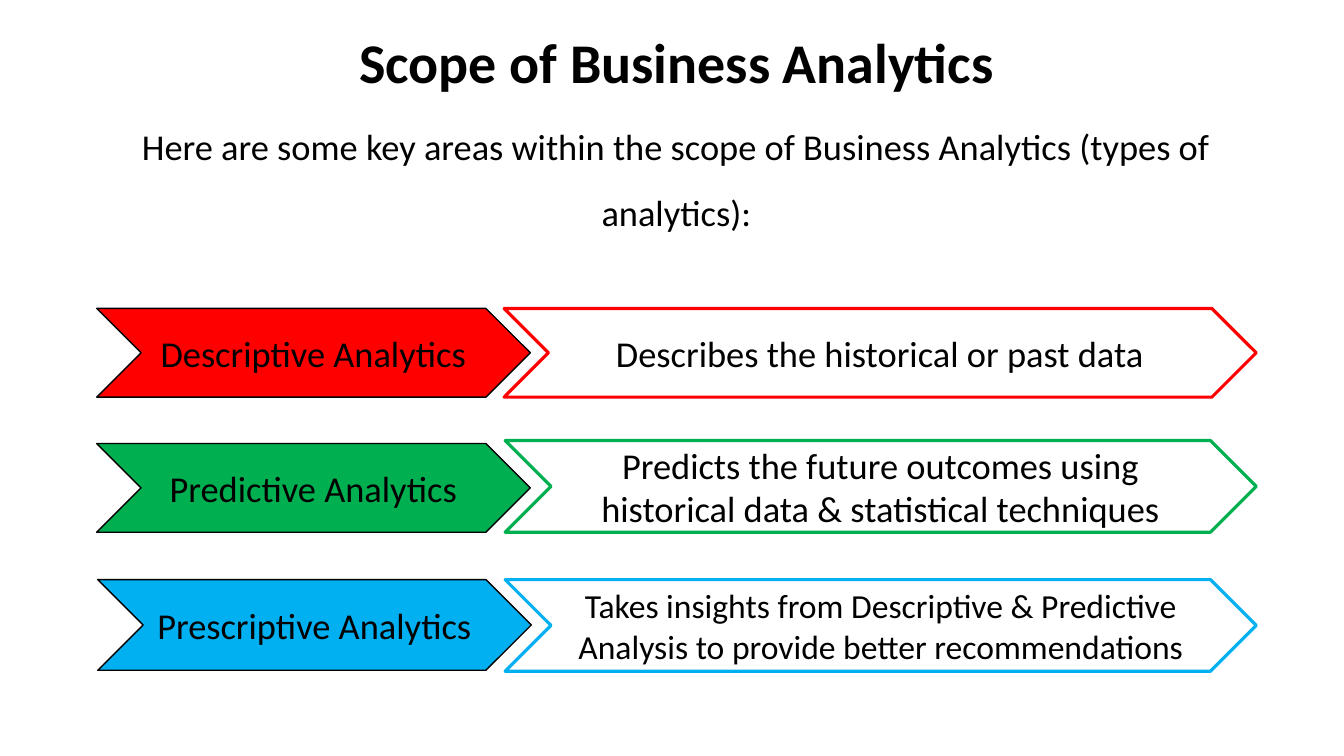
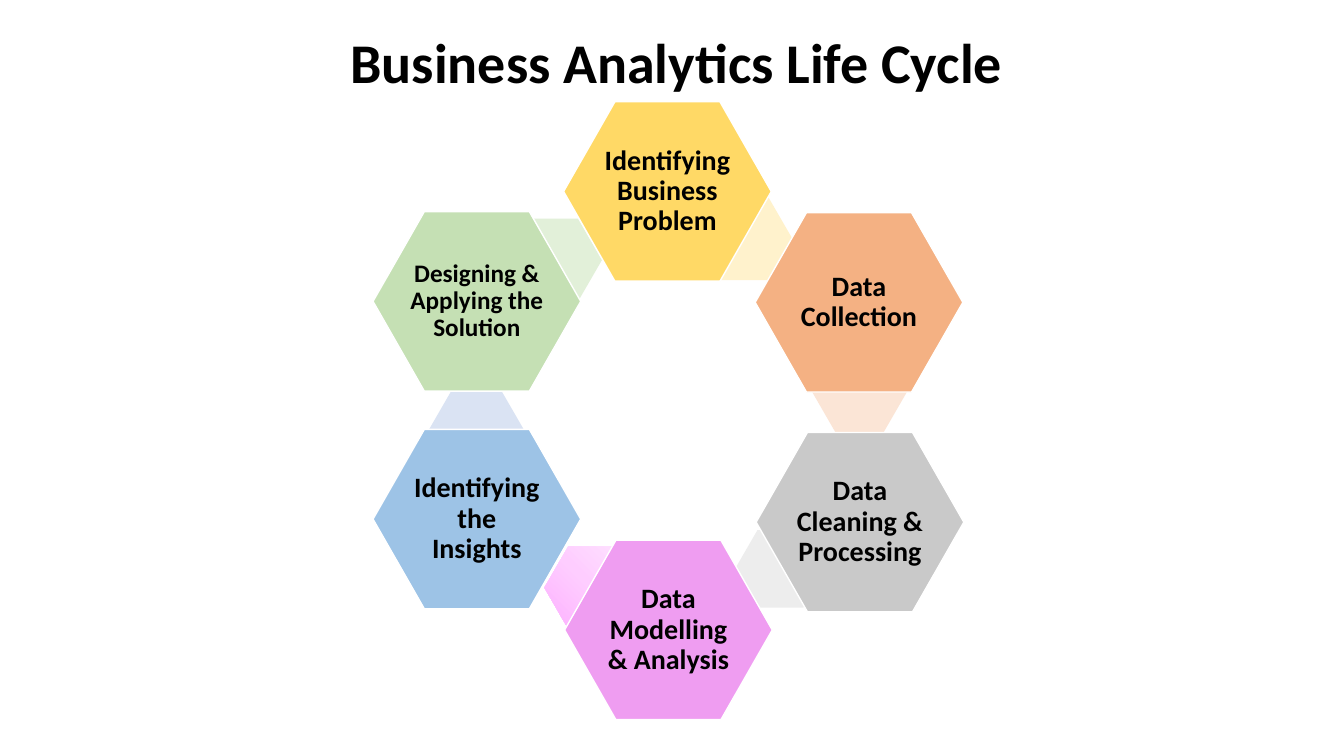
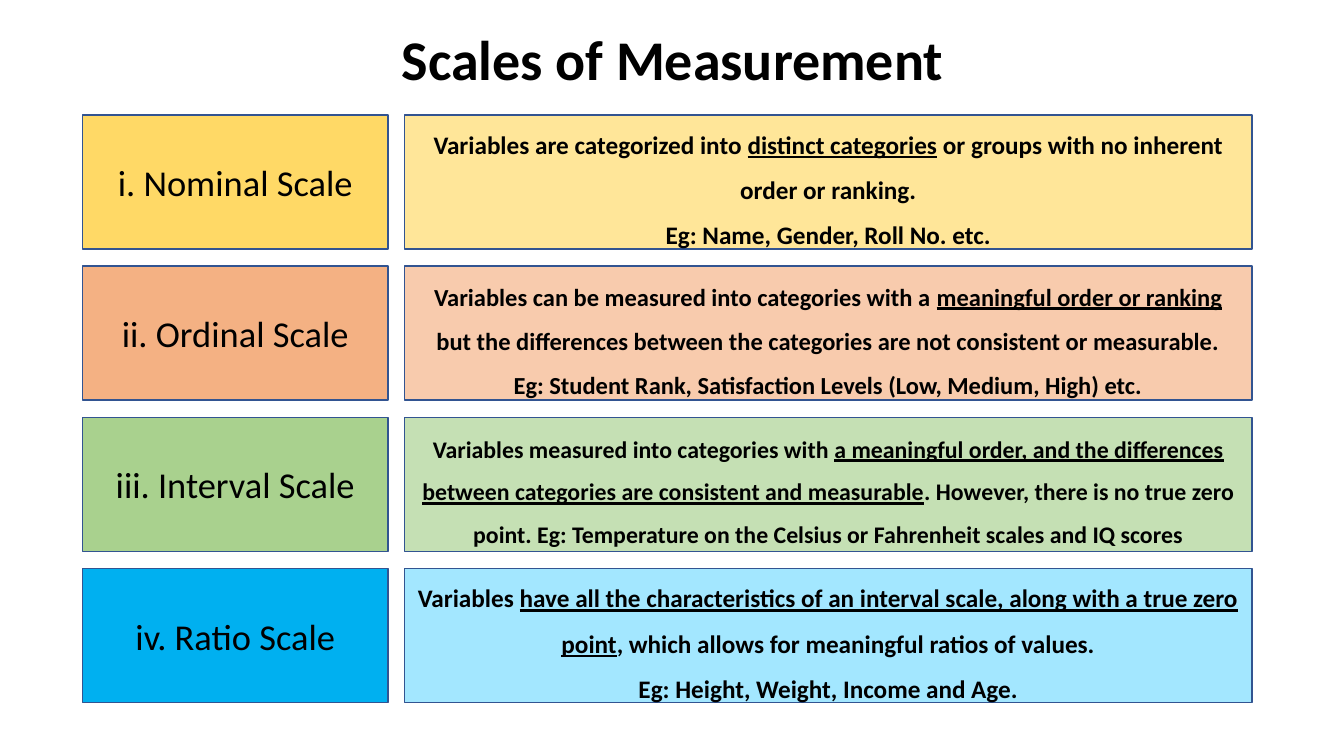
from pptx import Presentation
from pptx.dml.color import RGBColor
from pptx.enum.shapes import MSO_SHAPE
from pptx.enum.text import MSO_ANCHOR, PP_ALIGN
from pptx.oxml import parse_xml
from pptx.util import Inches, Pt

FONT = "Calibri"
BLACK, WHITE, NAVY = "000000", "FFFFFF", "325491"
RED, GREEN, BLUE = "FF0000", "00B050", "00B0F0"


def add_box(slide, kind, box, fill, line=None, weight=1):
    """Add a preset shape; no line colour means no outline."""
    sp = slide.shapes.add_shape(kind, *[Inches(v) for v in box])
    sp.shadow.inherit = False
    sp.fill.solid()
    sp.fill.fore_color.rgb = RGBColor.from_string(fill)
    if line:
        sp.line.color.rgb = RGBColor.from_string(line)
        sp.line.width = Pt(weight)
    else:
        sp.line.fill.background()
    return sp


def write(sp, paragraphs, size, bold=False, spacing=None, anchor=MSO_ANCHOR.MIDDLE):
    """Fill a shape with centred text; pieces between bars are underlined."""
    tf = sp.text_frame
    tf.word_wrap = True
    tf.vertical_anchor = anchor
    for i, text in enumerate(paragraphs):
        p = tf.add_paragraph() if i else tf.paragraphs[0]
        p.alignment = PP_ALIGN.CENTER
        p.line_spacing = spacing
        p.font.name, p.font.size, p.font.bold = FONT, Pt(size), bold
        p.font.color.rgb = RGBColor.from_string(BLACK)
        for j, piece in enumerate(text.split("|")):
            r = p.add_run()
            r.text = piece
            if j % 2:
                r.font.underline = True
    return tf


prs = Presentation()
prs.slide_width, prs.slide_height = Inches(13.33), Inches(7.5)

# Slides and titles
slides = []
for title, left, top in [
    ("Scope of Business Analytics", 0.96, 0.22),
    ("Business Analytics Life Cycle", 0.96, 0.22),
    ("Scales of Measurement", 0.92, 0.19),
]:
    slide = prs.slides.add_slide(prs.slide_layouts[6])
    tb = slide.shapes.add_textbox(Inches(left), Inches(top), Inches(11.5), Inches(0.77))
    write(tb, [title], 40, bold=True, anchor=MSO_ANCHOR.TOP)
    slides.append(slide)
scope, cycle, scales = slides

# Scope: introduction and one pair of chevrons per type
tb = scope.shapes.add_textbox(Inches(0.96), Inches(0.97), Inches(11.5), Inches(1.4))
write(tb, ["Here are some key areas within the scope of Business Analytics "
           "(types of analytics):"], 26, spacing=1.5, anchor=MSO_ANCHOR.TOP)

for name, meaning, color, size, name_box, meaning_box in [
    ("Descriptive Analytics", "Describes the historical or past data", RED, 26,
     (0.96, 3.06, 4.3, 0.88), (5, 3.06, 7.46, 0.88)),
    ("Predictive Analytics",
     "Predicts the future outcomes using historical data & statistical techniques",
     GREEN, 26, (0.96, 4.4, 4.3, 0.88), (5.01, 4.37, 7.45, 0.91)),
    ("Prescriptive Analytics",
     "Takes insights from Descriptive & Predictive Analysis to provide better "
     "recommendations",
     BLUE, 24, (0.97, 5.75, 4.3, 0.9), (5.01, 5.75, 7.45, 0.91)),
]:
    write(add_box(scope, MSO_SHAPE.CHEVRON, name_box, color, BLACK), [name], 26)
    write(add_box(scope, MSO_SHAPE.CHEVRON, meaning_box, WHITE, color, 2.25),
          [meaning], size)

# Life cycle: small linking hexagons behind the steps
for left, top, color in [
    (6.91, 1.96, "FFF2CC"), (8.05, 3.47, "FBE5D6"), (7.29, 5.26, "EDEDED"),
    (5.4, 5.42, "FECDFF"), (4.25, 3.86, "DAE3F3"), (5.02, 2.17, "E2F0D9"),
]:
    size = (0.9, 0.77) if color == "EDEDED" else (0.95, 0.82)
    link = add_box(cycle, MSO_SHAPE.HEXAGON, (left, top, *size), color)
    link.adjustments[0] = 0.289
    if color == "FECDFF":
        # Radial gradient from the lower left corner
        stops = "".join(
            f'<a:gs pos="{pos}"><a:srgbClr val="{stop}"/></a:gs>'
            for pos, stop in [(0, "FDB0FF"), (50000, "FECDFF"), (100000, "FEE6FF")])
        gradient = parse_xml(
            '<a:gradFill xmlns:a="http://schemas.openxmlformats.org/drawingml/2006/main"'
            f' rotWithShape="1"><a:gsLst>{stops}</a:gsLst><a:path path="circle">'
            '<a:fillToRect t="100000" r="100000"/></a:path></a:gradFill>')
        spPr = link._element.spPr
        spPr.replace(spPr.solidFill, gradient)

# Life cycle: steps, clockwise from the top
for text, left, top, color, size in [
    ("Identifying Business Problem", 5.59, 1.01, "FFD966", 20),
    ("Data Collection", 7.49, 2.11, "F4B183", 20),
    ("Data Cleaning & Processing", 7.5, 4.29, "C9C9C9", 20),
    ("Data Modelling & Analysis", 5.6, 5.36, "EF9DF1", 20),
    ("Identifying the Insights", 3.7, 4.26, "9DC3E6", 20),
    ("Designing & Applying the Solution", 3.7, 2.1, "C5E0B4", 18),
]:
    step = add_box(cycle, MSO_SHAPE.HEXAGON, (left, top, 2.06, 1.78), color, WHITE)
    step.adjustments[0] = 0.286
    tf = write(step, [text], size, bold=True, spacing=0.9)
    tf.margin_left = tf.margin_right = tf.margin_top = tf.margin_bottom = Inches(0.03)

# Scales: a name and a description per row
for i, (name, name_fill, text_fill, size, paragraphs) in enumerate([
    ("i. Nominal Scale", "FFD966", "FFE699", 18,
     ["Variables are categorized into |distinct categories| or groups with no "
      "inherent order or ranking.",
      "Eg: Name, Gender, Roll No. etc."]),
    ("ii. Ordinal Scale", "F4B183", "F8CBAD", 17.5,
     ["Variables can be measured into categories with a |meaningful order or "
      "ranking| but the differences between the categories are not consistent "
      "or measurable.",
      "Eg: Student Rank, Satisfaction Levels (Low, Medium, High) etc."]),
    ("iii. Interval Scale", "A9D18E", "C5E0B4", 17,
     ["Variables measured into categories with |a meaningful order, and the "
      "differences between categories are consistent and measurable|. However, "
      "there is no true zero point. Eg: Temperature on the Celsius or "
      "Fahrenheit scales and IQ scores"]),
    ("iv. Ratio Scale", BLUE, "A3E7FF", 18,
     ["Variables |have all the characteristics of an interval scale, along with "
      "a true zero point|, which allows for meaningful ratios of values.",
      "Eg: Height, Weight, Income and Age."]),
]):
    top = 1.14 + 1.5 * i
    write(add_box(scales, MSO_SHAPE.RECTANGLE, (0.82, top, 3.03, 1.33), name_fill, NAVY),
          [name], 26)
    write(add_box(scales, MSO_SHAPE.RECTANGLE, (4.01, top, 8.41, 1.33), text_fill, NAVY),
          paragraphs, size, bold=True, spacing=1.5)

prs.save("out.pptx")
